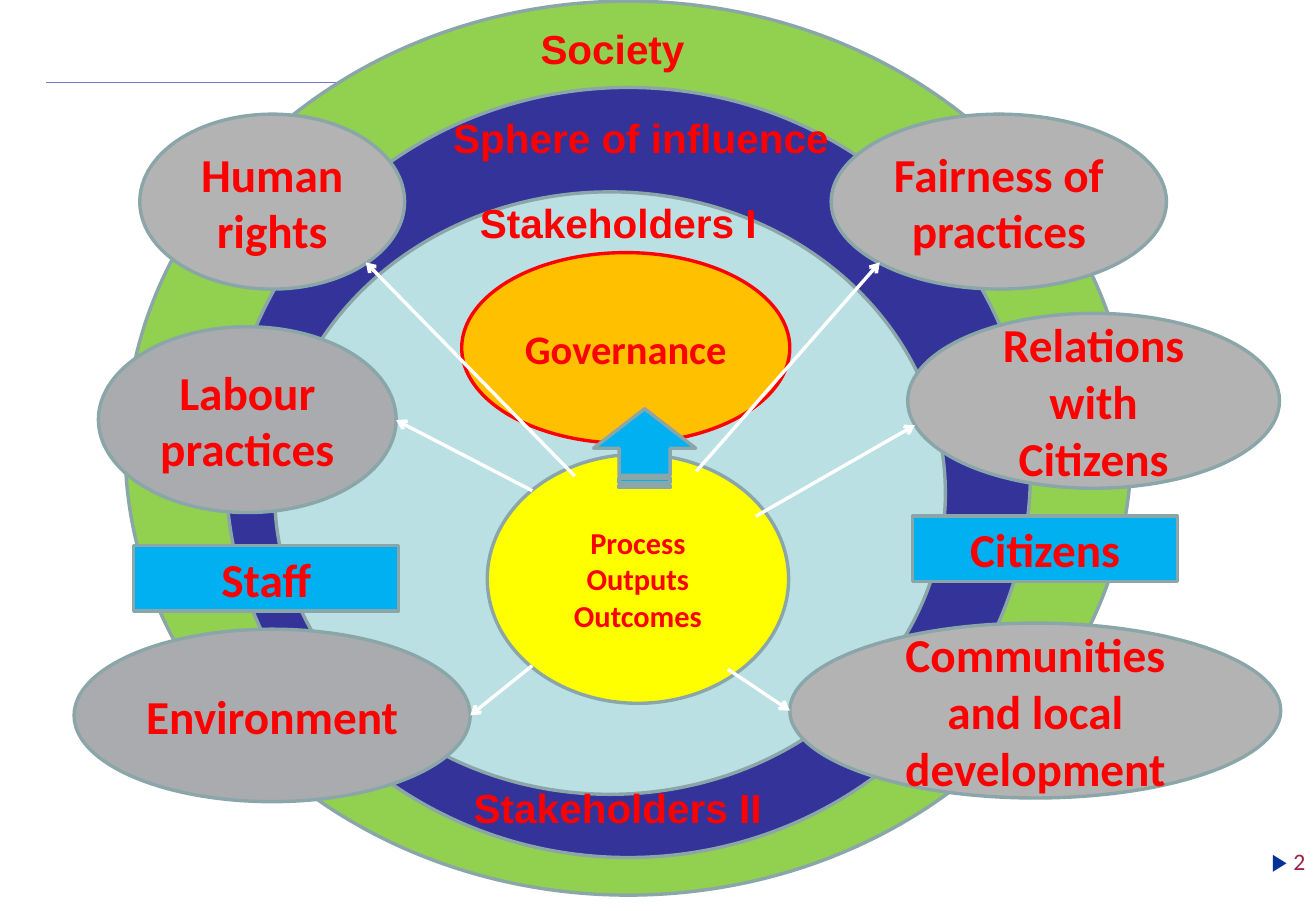
from lxml.etree import SubElement
from pptx import Presentation
from pptx.dml.color import RGBColor
from pptx.enum.shapes import MSO_CONNECTOR, MSO_SHAPE
from pptx.enum.text import MSO_ANCHOR, PP_ALIGN
from pptx.oxml.ns import qn
from pptx.util import Inches, Pt

RED, WHITE, EDGE = "FF0000", "FFFFFF", "8AA6A8"
SKY, GRAY, DARK = "00B0F0", "B3B3B3", "AAABAF"
OVAL, RECT = MSO_SHAPE.OVAL, MSO_SHAPE.RECTANGLE

# Content: places are left, top, width, height in inches
RINGS = [
    ((1.03, 0.01, 8.28, 7.36), "92D050"),
    ((1.86, 0.72, 6.62, 6.34), "333399"),
    ((2.26, 1.58, 5.52, 4.96), "BBE0E3"),
]
CORE = [
    ((4.01, 3.74, 2.48, 2.05), "FFFF00", EDGE, "Process\nOutputs\nOutcomes", 18),
    ((3.8, 2.08, 2.7, 1.57), "FFC000", RED, "Governance", 24),
]
LABELS = [
    ((3.85, 1.58, 3.08, 0.5), "Stakeholders I"),
    ((3.63, 0.88, 3.68, 0.5), "Sphere of influence"),
    ((4.35, 0.15, 1.64, 0.5), "Society"),
    ((3.8, 6.4, 3.08, 0.5), "Stakeholders II"),
]
TOPICS = [
    ((1.15, 0.94, 2.18, 1.44), GRAY, "Human rights"),
    ((0.81, 2.69, 2.45, 1.53), DARK, "Labour practices"),
    ((0.61, 5.18, 3.26, 1.42), DARK, "Environment"),
    ((6.84, 0.94, 2.76, 1.44), GRAY, "Fairness of practices"),
    ((7.47, 2.58, 3.06, 1.44), GRAY, "Relations with Citizens"),
    ((6.5, 5.13, 4.04, 1.44), GRAY, "Communities and local development"),
]
ARROWS = [
    (4.73, 3.92, 3.01, 2.16),
    (4.38, 4.04, 3.26, 3.46),
    (4.38, 5.48, 3.87, 5.89),
    (5.73, 3.88, 7.24, 2.16),
    (6.22, 4.25, 7.53, 3.5),
    (5.99, 5.51, 6.5, 5.85),
]
GROUPS = [
    ((1.1, 4.49, 2.18, 0.54), "Staff"),
    ((7.51, 4.25, 2.18, 0.54), "Citizens"),
]

deck = Presentation()
deck.slide_width, deck.slide_height = Inches(10.83), Inches(7.5)
slide = deck.slides.add_slide(deck.slide_layouts[6])


def color(code):
    return RGBColor.from_string(code)


def style(run, size, font, tint, bold):
    run.font.size, run.font.name, run.font.bold = Pt(size), font, bold
    run.font.color.rgb = color(tint)


def write(shape, text, size=28, font="Calibri", tint=RED, bold=True,
          align=PP_ALIGN.CENTER, anchor=MSO_ANCHOR.MIDDLE):
    frame = shape.text_frame
    frame.word_wrap, frame.vertical_anchor = True, anchor
    frame.text = text
    for para in frame.paragraphs:
        para.alignment = align
        style(para.runs[0], size, font, tint, bold)
    return frame.paragraphs[0]


def draw(kind, place, fill, edge=EDGE):
    shape = slide.shapes.add_shape(kind, *map(Inches, place))
    shape.shadow.inherit = False
    shape.fill.solid()
    shape.fill.fore_color.rgb = color(fill)
    shape.line.color.rgb = color(edge)
    shape.line.width = Pt(2)
    return shape


def box(place):
    return slide.shapes.add_textbox(*map(Inches, place))


def link(ends, tint, width, arrow=False):
    line = slide.shapes.add_connector(MSO_CONNECTOR.STRAIGHT, *map(Inches, ends))
    line.line.color.rgb = color(tint)
    line.line.width = Pt(width)
    props = line.line._get_or_add_ln()
    if arrow:
        SubElement(props, qn("a:tailEnd"), type="arrow")
    SubElement(props.getparent(), qn("a:effectLst"))


# Rule line and rings
link((7.21, 0.68, 0.38, 0.68), "7575D1", 0.75)
for place, fill in RINGS:
    draw(OVAL, place, fill)

# Page number
mark = write(box((10.07, 6.89, 0.77, 0.4)), "▶ ", size=14, bold=False,
             font="Times New Roman", tint="003399", align=PP_ALIGN.RIGHT)
number = mark.add_run()
number.text = "2"
style(number, 14, "Calibri", "992441", False)

# Core ovals and ring labels
for place, fill, edge, text, size in CORE:
    write(draw(OVAL, place, fill, edge), text, size=size)
for place, text in LABELS:
    write(box(place), text, size=24, font="Arial",
          align=PP_ALIGN.LEFT, anchor=MSO_ANCHOR.TOP)

# Topics and the arrows that reach them
for place, fill, text in TOPICS:
    write(draw(OVAL, place, fill), text)
for ends in ARROWS:
    link(ends, WHITE, 2, arrow=True)

# Upward arrow and groups
rise = draw(MSO_SHAPE.STRIPED_RIGHT_ARROW, (4.98, 3.27, 0.65, 0.84), SKY)
rise.rotation = 270
for place, text in GROUPS:
    write(draw(RECT, place, SKY), text)

deck.save("out.pptx")
